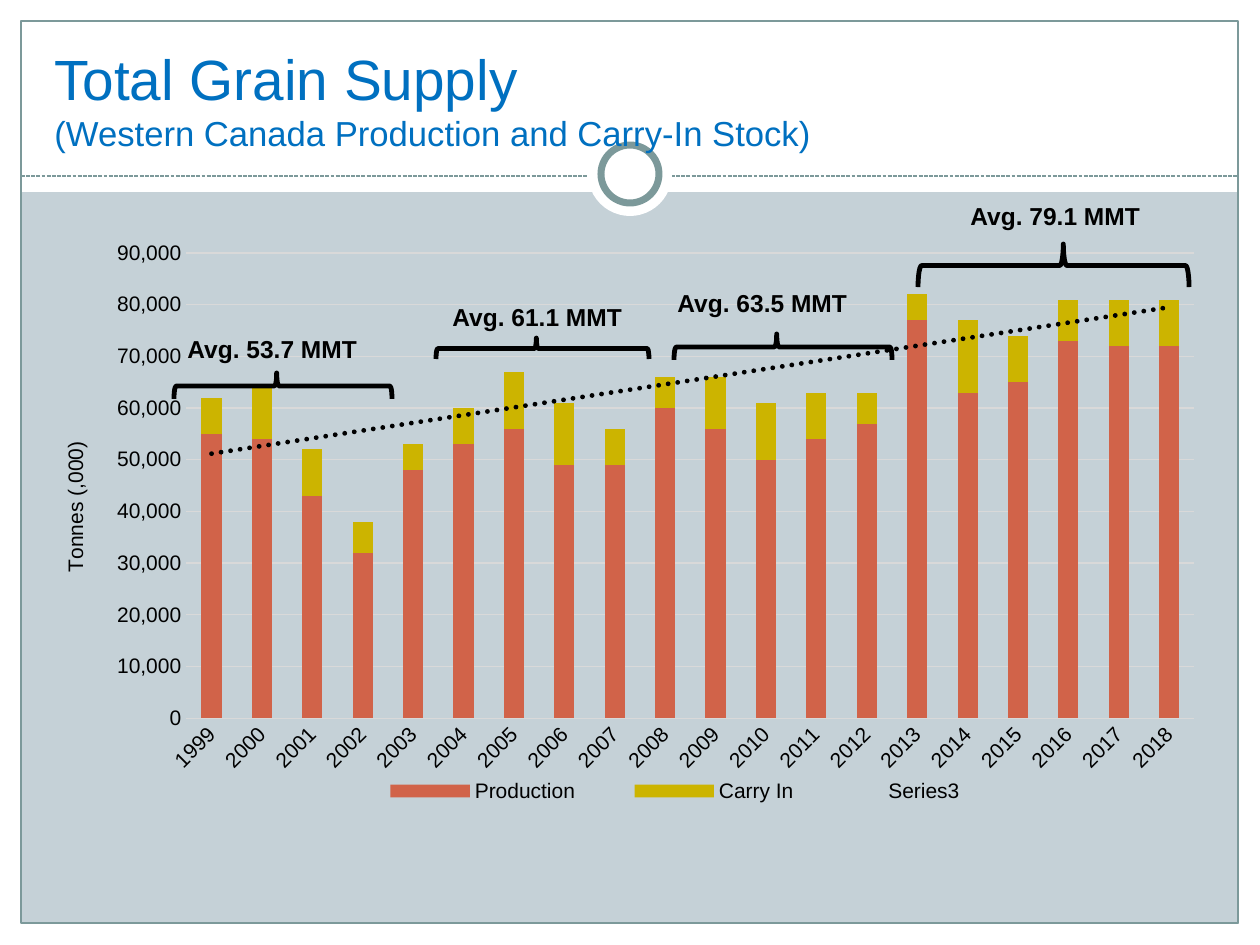
import pptx
import pptx.util
import pptx.chart.data
import pptx.oxml
from pptx.dml.color import RGBColor
from pptx.enum.chart import XL_CHART_TYPE, XL_LEGEND_POSITION, XL_MARKER_STYLE, XL_TICK_MARK
from pptx.enum.dml import MSO_LINE
from pptx.enum.shapes import MSO_CONNECTOR, MSO_SHAPE
from pptx.enum.text import MSO_ANCHOR
from pptx.oxml.ns import nsdecls, qn

SCALE = 914400 / 126
FONT = "Arial"
COLORS = {"background": "C5D1D7", "white": "FFFFFF", "frame": "7C999A", "title": "0070C0",
          "text": "000000", "grid": "D9D9D9", "production": "D16349", "carry": "CCB400"}

TITLE = [("Total Grain Supply", 32.4), ("(Western Canada Production and Carry-In Stock)", 19.8)]
MARGINS = [(0, 924, 1260, 21), (0, 0, 1260, 192), (0, 0, 21, 945), (1239, 0, 21, 945)]
FIRST_YEAR, LAST_YEAR = 1999, 2018
THOUSANDS = {
    "Production": [55, 54, 43, 32, 48, 53, 56, 49, 49, 60, 56, 50, 54, 57, 77, 63, 65, 73, 72, 72],
    "Carry In": [7, 10, 9, 6, 5, 7, 11, 12, 7, 6, 10, 11, 9, 6, 5, 14, 9, 8, 9, 9],
    "Series3": [63, 64, 51, 38, 53, 60, 67, 62, 56, 66, 66, 61, 62, 63, 82, 77, 74, 80, 81, 81],
}
CHART_BOX = (35, 231, 1182, 598)
PLOT_BOX = (186, 253, 1008, 465)
LEGEND_BOX = (380, 777, 590, 28)
AVERAGES = [
    ("Avg. 79.1 MMT", (958, 195), (1032, 130, 43, 271), 0.464),
    ("Avg. 63.5 MMT", (665, 282), (770, 238, 26, 218), 0.529),
    ("Avg. 61.1 MMT", (440, 296), (532, 242, 21, 213), 0.529),
    ("Avg. 53.7 MMT", (175, 328), (270, 277, 26, 218), 0.529),
]


def px(*values):
    return [round(value * SCALE) for value in values]


def color(name):
    return RGBColor.from_string(COLORS[name])


def style_line(line, name, width):
    line.color.rgb = color(name)
    line.width = pptx.util.Pt(width)


def style_font(font, size, name="text", bold=False):
    font.name = FONT
    font.size = pptx.util.Pt(size)
    font.bold = bold
    font.color.rgb = color(name)


def add_shape(slide, preset, box, fill=None, line=None, width=0.75):
    shape = slide.shapes.add_shape(preset, *px(*box))
    shape.shadow.inherit = False
    if fill:
        shape.fill.solid()
        shape.fill.fore_color.rgb = color(fill)
    else:
        shape.fill.background()
    if line:
        style_line(shape.line, line, width)
    else:
        shape.line.fill.background()
    return shape


def add_text(slide, box, text, wrap):
    frame = slide.shapes.add_textbox(*px(*box)).text_frame
    frame.word_wrap = wrap
    frame.text = text
    return frame


def add_frame(slide):
    for box in MARGINS:
        add_shape(slide, MSO_SHAPE.RECTANGLE, box, "white")
    add_shape(slide, MSO_SHAPE.RECTANGLE, (21, 21, 1217, 902), line="frame")
    divider = slide.shapes.add_connector(MSO_CONNECTOR.STRAIGHT, *px(21, 176, 1238, 176))
    style_line(divider.line, "frame", 0.75)
    divider.line.dash_style = MSO_LINE.SQUARE_DOT
    divider._element.spPr.append(pptx.oxml.parse_xml(f"<a:effectLst {nsdecls('a')}/>"))
    add_shape(slide, MSO_SHAPE.OVAL, (588, 132, 84, 84), "white")
    add_shape(slide, MSO_SHAPE.OVAL, (601, 145, 58, 58), "white", "frame", 4)


def set_layout(element, box, inner=False):
    left, top, width, height = CHART_BOX
    values = {"x": (box[0] - left) / width, "y": (box[1] - top) / height,
              "w": box[2] / width, "h": box[3] / height}
    target = '<c:layoutTarget val="inner"/>' if inner else ""
    modes = '<c:xMode val="edge"/><c:yMode val="edge"/>'
    sizes = "".join(f'<c:{key} val="{value:.3f}"/>' for key, value in values.items())
    for old in element.findall(qn("c:layout")):
        element.remove(old)
    layout = pptx.oxml.parse_xml(
        f"<c:layout {nsdecls('c')}><c:manualLayout>{target}{modes}{sizes}</c:manualLayout></c:layout>")
    if inner:
        element.insert(0, layout)
    else:
        element.find(qn("c:legendPos")).addnext(layout)


def move_total_to_line(chart):
    bar_chart = chart.plots[0]._element
    total = bar_chart.findall(qn("c:ser"))[-1]
    line_chart = pptx.oxml.parse_xml(
        f'<c:lineChart {nsdecls("c")}><c:grouping val="standard"/><c:varyColors val="0"/>'
        '<c:marker val="1"/></c:lineChart>')
    for bar_setting in total.findall(qn("c:invertIfNegative")):
        total.remove(bar_setting)
    line_chart.insert(2, total)
    for axis in bar_chart.findall(qn("c:axId")):
        line_chart.append(pptx.oxml.parse_xml(f'<c:axId {nsdecls("c")} val="{axis.get("val")}"/>'))
    bar_chart.addnext(line_chart)
    series = chart.plots[1].series[0]
    series.format.line.fill.background()
    series.marker.style = XL_MARKER_STYLE.NONE
    series.smooth = False
    total.find(qn("c:cat")).addprevious(pptx.oxml.parse_xml(
        f'<c:trendline {nsdecls("c", "a")}><c:spPr><a:ln w="34925" cap="rnd"><a:solidFill>'
        f'<a:srgbClr val="{COLORS["text"]}"/></a:solidFill><a:prstDash val="sysDot"/></a:ln></c:spPr>'
        '<c:trendlineType val="linear"/><c:dispRSqr val="0"/><c:dispEq val="0"/></c:trendline>'))


def add_supply_chart(slide):
    data = pptx.chart.data.CategoryChartData(number_format="#,##0")
    data.categories = [str(year) for year in range(FIRST_YEAR, LAST_YEAR + 1)]
    for name, values in THOUSANDS.items():
        data.add_series(name, [value * 1000 for value in values])
    chart = slide.shapes.add_chart(XL_CHART_TYPE.COLUMN_STACKED, *px(*CHART_BOX), data).chart
    style_font(chart.font, 12)
    chart.has_title = False
    columns = chart.plots[0]
    columns.gap_width, columns.overlap = 150, 100
    columns.vary_by_categories = False
    move_total_to_line(chart)
    for series, name in zip(columns.series, ("production", "carry")):
        series.format.fill.solid()
        series.format.fill.fore_color.rgb = color(name)

    years, tonnes = chart.category_axis, chart.value_axis
    for axis in (years, tonnes):
        axis.major_tick_mark = axis.minor_tick_mark = XL_TICK_MARK.NONE
        style_font(axis.tick_labels.font, 12)
    style_line(years.format.line, "grid", 0.75)
    years._element.find(qn("c:txPr")).find(qn("a:bodyPr")).set("rot", "-2700000")
    tonnes.minimum_scale, tonnes.maximum_scale, tonnes.major_unit = 0, 90000, 10000
    tonnes.tick_labels.number_format = "#,##0"
    tonnes.tick_labels.number_format_is_linked = False
    tonnes.format.line.fill.background()
    style_line(tonnes.major_gridlines.format.line, "grid", 0.75)
    title_frame = tonnes.axis_title.text_frame
    title_frame.text = "Tonnes (,000)"
    style_font(title_frame.paragraphs[0].runs[0].font, 12)

    chart.has_legend = True
    legend = chart.legend
    legend.position = XL_LEGEND_POSITION.BOTTOM
    legend.include_in_layout = False
    style_font(legend.font, 12)
    set_layout(legend._element, LEGEND_BOX)
    legend._element.find(qn("c:legendPos")).addnext(pptx.oxml.parse_xml(
        f'<c:legendEntry {nsdecls("c")}><c:idx val="3"/><c:delete val="1"/></c:legendEntry>'))
    set_layout(chart._chartSpace.chart.plotArea, PLOT_BOX, inner=True)


def main():
    presentation = pptx.Presentation()
    presentation.slide_width, presentation.slide_height = px(1260, 945)
    slide = presentation.slides.add_slide(presentation.slide_layouts[6])
    slide.background.fill.solid()
    slide.background.fill.fore_color.rgb = color("background")
    add_frame(slide)
    add_supply_chart(slide)

    title = add_text(slide, (42, 37, 1176, 124), "\v".join(text for text, size in TITLE), True)
    title.vertical_anchor = MSO_ANCHOR.MIDDLE
    for run, (text, size) in zip(title.paragraphs[0].runs, TITLE):
        style_font(run.font, size, "title")

    for text, (left, top), brace_box, point in AVERAGES:
        label = add_text(slide, (left, top, 218, 43), text, False)
        style_font(label.paragraphs[0].runs[0].font, 14, bold=True)
        brace = add_shape(slide, MSO_SHAPE.LEFT_BRACE, brace_box, line="text", width=2.75)
        brace.rotation = 90
        brace.adjustments[0], brace.adjustments[1] = 0.083, point
    presentation.save("out.pptx")


if __name__ == "__main__":
    main()
